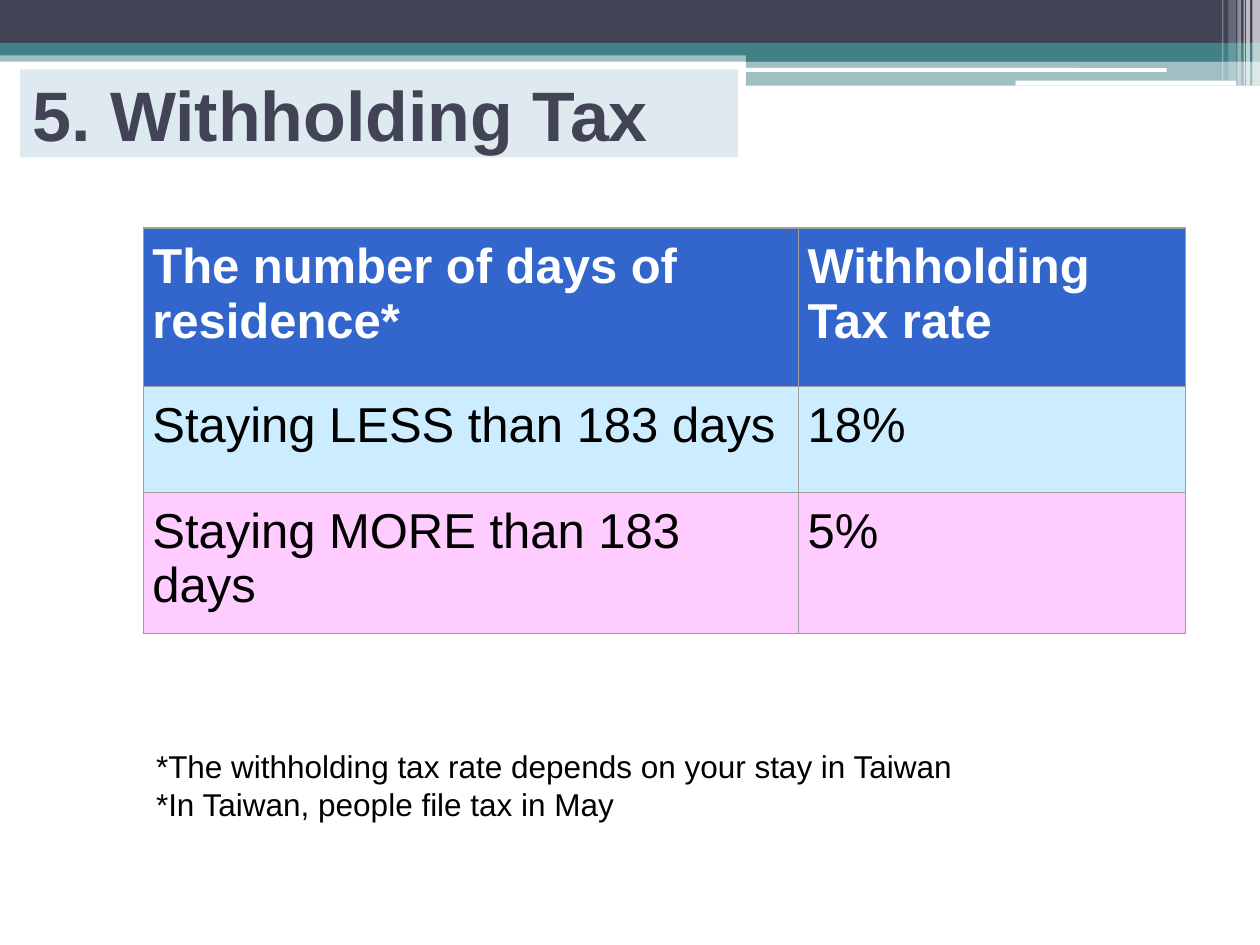
from lxml import etree
from pptx import Presentation
from pptx.dml.color import RGBColor
from pptx.enum.shapes import MSO_SHAPE as Shape
from pptx.enum.text import MSO_ANCHOR as Anchor
from pptx.oxml.ns import qn
from pptx.util import Inches, Pt

# The slide is a grid of 100 columns by 75 rows
COLUMNS, ROWS = 100, 75
WIDTH, HEIGHT = Inches(10), Inches(7.5)
NAVY, TEAL, WHITE, BLACK = "424456", "438086", "FFFFFF", "000000"


def color(value):
    return RGBColor.from_string(value)


def across(columns):
    return round(WIDTH * columns / COLUMNS)


def down(rows):
    return round(HEIGHT * rows / ROWS)


def place(left, top, width, height):
    return across(left), down(top), across(width), down(height)


class SlideBuilder:
    font = "Arial"
    border = "9E9E9E"

    def __init__(self, presentation):
        self.slide = presentation.slides.add_slide(presentation.slide_layouts[6])

    def paint(self, target, fill, opacity=100):
        target.fill.solid()
        target.fill.fore_color.rgb = color(fill)
        if opacity < 100:
            tint = target.fill._xPr.find(".//" + qn("a:srgbClr"))
            etree.SubElement(tint, qn("a:alpha"), val=str(opacity * 1000))

    def bar(self, box, fill, opacity=100, kind=Shape.RECTANGLE):
        shape = self.slide.shapes.add_shape(kind, *place(*box))
        shape.shadow.inherit = False
        shape.line.fill.background()
        self.paint(shape, fill, opacity)

    def set_text(self, frame, text, size, ink, bold=False):
        frame.word_wrap = True
        frame.text = text
        for paragraph in frame.paragraphs:
            for run in paragraph.runs:
                run.font.name = self.font
                run.font.size = Pt(size)
                run.font.bold = bold
                run.font.color.rgb = color(ink)

    def text(self, box, text, size, ink, bold=False, fill=None, anchor=Anchor.TOP):
        shape = self.slide.shapes.add_textbox(*place(*box))
        if fill:
            self.paint(shape, fill)
        shape.text_frame.vertical_anchor = anchor
        self.set_text(shape.text_frame, text, size, ink, bold)

    def outline(self, cell):
        properties = cell._tc.get_or_add_tcPr()
        for index, side in enumerate(("lnL", "lnR", "lnT", "lnB")):
            line = etree.Element(qn("a:" + side), w=str(Pt(0.75)))
            solid = etree.SubElement(line, qn("a:solidFill"))
            etree.SubElement(solid, qn("a:srgbClr"), val=self.border)
            properties.insert(index, line)

    def table(self, left, top, widths, heights, records, fills):
        box = place(left, top, sum(widths), sum(heights))
        table = self.slide.shapes.add_table(len(heights), len(widths), *box).table
        for column, width in zip(table.columns, widths):
            column.width = across(width)
        for index, (row, height) in enumerate(zip(table.rows, heights)):
            row.height = down(height)
            header = index == 0
            for cell, value in zip(row.cells, records[index]):
                cell.margin_left = cell.margin_right = across(0.7)
                cell.margin_top = cell.margin_bottom = down(0.9)
                self.paint(cell, fills[index])
                self.outline(cell)
                self.set_text(cell.text_frame, value, 28, WHITE if header else BLACK, header)


def main():
    presentation = Presentation()
    presentation.slide_width, presentation.slide_height = WIDTH, HEIGHT
    builder = SlideBuilder(presentation)

    # Bands along the top
    builder.bar((0, 4, 100, 0.9), TEAL, 50)
    builder.bar((0, 0, 100, 3.4), NAVY)
    builder.bar((0, 3.4, 100, 1), TEAL)
    builder.bar((59.2, 3.9, 40.8, 1), TEAL)
    builder.bar((59.2, 4.8, 40.8, 2), TEAL, 50)
    builder.bar((59.1, 5.4, 33.5, 0.3), WHITE, kind=Shape.ROUNDED_RECTANGLE)
    builder.bar((80.6, 6.4, 17.5, 0.4), WHITE, kind=Shape.ROUNDED_RECTANGLE)

    # Translucent stripes in the corner: left, width, height, opacity
    stripes = [(99.4, 0.6, 6.8, 65), (98.9, 0.3, 6.8, 65), (98.7, 0.1, 6.8, 60),
               (98.2, 0.3, 6.8, 40), (97.5, 0.6, 6.4, 20), (97, 0.1, 6.4, 30)]
    for left, width, height, opacity in stripes:
        builder.bar((left, 0, width, height), WHITE, opacity)

    # Title
    builder.text((1.6, 5.5, 57, 7), "5. Withholding Tax", 40, NAVY, True,
                 "DEE9F0", Anchor.MIDDLE)

    # Tax rates
    builder.table(11.4, 18.1, (52, 30.7), (12.6, 8.4, 11.2),
                  [("The number of days of residence*", "Withholding Tax rate"),
                   ("Staying LESS than 183 days", "18%"),
                   ("Staying MORE than 183 days", "5%")],
                  ("3366CC", "CCECFF", "FFCCFF"))

    # Footnotes
    builder.text((11.4, 58.8, 71.7, 7.1),
                 "*The withholding tax rate depends on your stay in Taiwan\n"
                 "*In Taiwan, people file tax in May", 18, BLACK)

    presentation.save("out.pptx")


if __name__ == "__main__":
    main()
